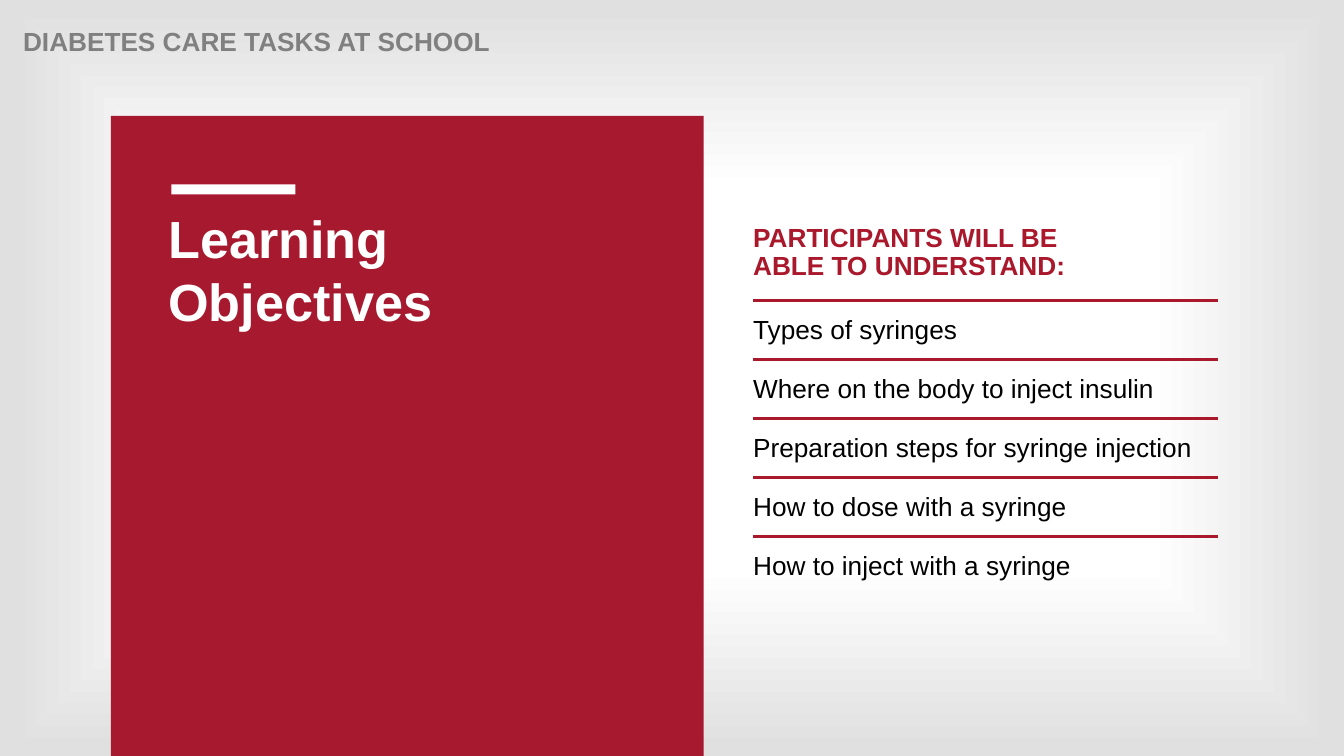
from dataclasses import dataclass

from lxml.etree import SubElement
from pptx import Presentation
from pptx.dml.color import RGBColor
from pptx.enum.shapes import MSO_CONNECTOR, MSO_SHAPE
from pptx.oxml.ns import qn
from pptx.util import Inches, Pt

SLIDE_WIDTH, SLIDE_HEIGHT = Inches(13.33), Inches(7.5)


@dataclass(frozen=True)
class Theme:
    font: str = "Arial"
    panel: str = "A6192E"
    accent: str = "AA182C"
    white: str = "FFFFFF"
    edge: str = "E0E0E0"
    grey: str = "808080"
    black: str = "000000"
    title_size: float = 37.3
    text_size: float = 18.7
    rule_width: float = 2
    tight: float = 0.9


THEME = Theme()

# Shares of the slide, in percent
LIST_LEFT, LIST_WIDTH = 56.04, 34.58
FIRST_RULE, RULE_PITCH = 39.73, 7.8

OBJECTIVES = [
    "Types of syringes",
    "Where on the body to inject insulin",
    "Preparation steps for syringe injection",
    "How to dose with a syringe",
    "How to inject with a syringe",
]


def across(percent):
    return round(SLIDE_WIDTH * percent / 100)


def down(percent):
    return round(SLIDE_HEIGHT * percent / 100)


def area(left, top, width, height):
    return across(left), down(top), across(width), down(height)


def set_background(slide):
    """White centre that fades to grey along the slide's edges."""
    slide.background.fill.gradient()
    gradient = slide._element.find(".//" + qn("a:gradFill"))
    for child in list(gradient):
        gradient.remove(child)
    stops = SubElement(gradient, qn("a:gsLst"))
    for position, color in ((12, THEME.white), (50, THEME.white), (98, THEME.edge)):
        stop = SubElement(stops, qn("a:gs"), pos=str(position * 1000))
        SubElement(stop, qn("a:srgbClr"), val=color)
    shade = SubElement(gradient, qn("a:path"), {"path": "shape"})
    SubElement(shade, qn("a:fillToRect"), {side: "50000" for side in "ltrb"})


def add_block(slide, place, color):
    block = slide.shapes.add_shape(MSO_SHAPE.RECTANGLE, *area(*place))
    block.shadow.inherit = False
    block.fill.solid()
    block.fill.fore_color.rgb = RGBColor.from_string(color)
    block.line.fill.background()


def add_text(slide, place, text, color, size=THEME.text_size, bold=True,
             spacing=THEME.tight, before=1, after=0, inset=True):
    frame = slide.shapes.add_textbox(*area(*place)).text_frame
    frame.word_wrap = True
    if not inset:
        frame.margin_left = frame.margin_right = 0
        frame.margin_top = frame.margin_bottom = 0
    frame.text = text
    for paragraph in frame.paragraphs:
        paragraph.line_spacing = spacing
        paragraph.space_before = Pt(before)
        paragraph.space_after = Pt(after)
        for run in paragraph.runs:
            run.font.name = THEME.font
            run.font.size = Pt(size)
            run.font.bold = bold
            run.font.color.rgb = RGBColor.from_string(color)


def add_rule(slide, top):
    rule = slide.shapes.add_connector(
        MSO_CONNECTOR.STRAIGHT, across(LIST_LEFT), down(top),
        across(LIST_LEFT + LIST_WIDTH), down(top))
    rule.line.color.rgb = RGBColor.from_string(THEME.accent)
    rule.line.width = Pt(THEME.rule_width)
    SubElement(rule._element.spPr, qn("a:effectLst"))


def main():
    deck = Presentation()
    deck.slide_width, deck.slide_height = SLIDE_WIDTH, SLIDE_HEIGHT
    slide = deck.slides.add_slide(deck.slide_layouts[6])
    set_background(slide)

    # Red panel with its white bar
    add_block(slide, (8.25, 15.33, 44.11, 84.67), THEME.panel)
    add_block(slide, (12.75, 24.4, 9.23, 1.33), THEME.white)

    # Running header and title
    add_text(slide, (0.98, 3.2, 82.52, 3.73), "DIABETES CARE TASKS AT SCHOOL",
             THEME.grey)
    add_text(slide, (11.78, 26.67, 36.53, 26), "Learning Objectives",
             THEME.white, size=THEME.title_size, spacing=1.0, before=0)

    # Objectives, each under a rule
    add_text(slide, (LIST_LEFT, 29.73, LIST_WIDTH, 15.47),
             "PARTICIPANTS WILL BE\vABLE TO UNDERSTAND:", THEME.accent, inset=False)
    add_text(slide, (LIST_LEFT, 41.87, LIST_WIDTH, 39.33), "\n".join(OBJECTIVES),
             THEME.black, bold=False, after=21, inset=False)
    for row in range(len(OBJECTIVES)):
        add_rule(slide, FIRST_RULE + row * RULE_PITCH)

    deck.save("out.pptx")


if __name__ == "__main__":
    main()
